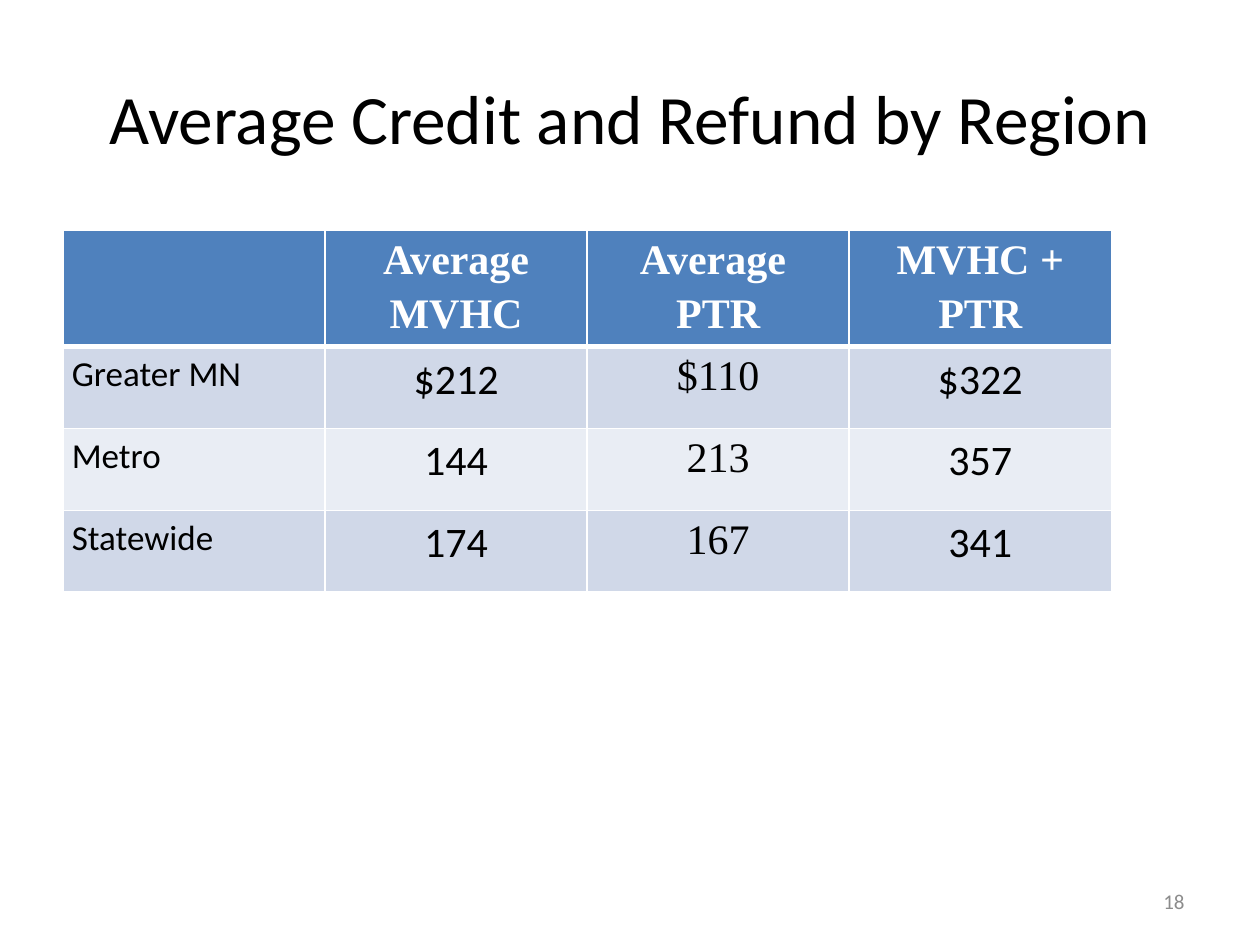
from dataclasses import dataclass

from lxml import etree
from pptx import Presentation
from pptx.dml.color import RGBColor
from pptx.enum.text import MSO_ANCHOR, PP_ALIGN
from pptx.oxml.ns import qn
from pptx.util import Inches, Pt

LEFT, CENTER, RIGHT = PP_ALIGN.LEFT, PP_ALIGN.CENTER, PP_ALIGN.RIGHT
MIDDLE = MSO_ANCHOR.MIDDLE
SANS, SERIF = "Calibri", "Times New Roman"
BLACK, WHITE, GRAY = "000000", "FFFFFF", "8C8C8C"
HEADER_FILL, BAND_FILLS = "4F81BD", ("D0D8E8", "E9EDF4")

COLUMN_WIDTH, ROW_HEIGHT = 2.08, 0.65
ROWS = [
    ("", "Average MVHC", "Average \nPTR", "MVHC + PTR"),
    ("Greater MN", "$212", "$110", "$322"),
    ("Metro", "144", "213", "357"),
    ("Statewide", "174", "167", "341"),
]


@dataclass(frozen=True)
class TextStyle:
    size: float
    font: str = SANS
    color: str = BLACK
    bold: bool = False
    alignment: PP_ALIGN = CENTER
    line_spacing: float = 1.0


@dataclass(frozen=True)
class Label:
    text: str
    left: float
    top: float
    width: float
    height: float
    style: TextStyle


HEADER = TextStyle(24, SERIF, WHITE, bold=True, line_spacing=1.15)
REGION = TextStyle(20, alignment=LEFT, line_spacing=1.15)
VALUE = TextStyle(24, line_spacing=1.15)
REFUND_VALUE = TextStyle(24, SERIF, line_spacing=1.15)
BODY_STYLES = (REGION, VALUE, REFUND_VALUE, VALUE)

LABELS = [
    Label("Average Credit and Refund by Region", 0.5, 0.3, 9, 1.25, TextStyle(39.6)),
    Label("18", 7.17, 6.95, 2.33, 0.4, TextStyle(12, color=GRAY, alignment=RIGHT)),
]


def rgb(value: str) -> RGBColor:
    return RGBColor.from_string(value)


def write_text(frame, text: str, style: TextStyle) -> None:
    frame.text = text
    font_format = {"size": Pt(style.size), "name": style.font, "bold": style.bold}
    for paragraph in frame.paragraphs:
        paragraph.alignment = style.alignment
        paragraph.line_spacing = style.line_spacing
        for run in paragraph.runs:
            for name, value in font_format.items():
                setattr(run.font, name, value)
            run.font.color.rgb = rgb(style.color)


def add_label(slide, label: Label) -> None:
    box = slide.shapes.add_textbox(
        Inches(label.left), Inches(label.top), Inches(label.width), Inches(label.height)
    )
    box.text_frame.word_wrap = True
    box.text_frame.vertical_anchor = MIDDLE
    write_text(box.text_frame, label.text, label.style)


def set_borders(cell, bottom: float, top: float) -> None:
    """Put white lines before the fill, in the order the schema asks for."""
    properties = cell._tc.get_or_add_tcPr()
    widths = {"a:lnL": 1, "a:lnR": 1, "a:lnT": top, "a:lnB": bottom}
    for index, (tag, width) in enumerate(widths.items()):
        line = etree.Element(qn(tag), w=str(Pt(width)))
        fill = etree.SubElement(line, qn("a:solidFill"))
        etree.SubElement(fill, qn("a:srgbClr"), val=WHITE)
        properties.insert(index, line)


def format_cell(cell, text: str, row: int, column: int) -> None:
    is_header = row == 0
    cell.fill.solid()
    cell.fill.fore_color.rgb = rgb(HEADER_FILL if is_header else BAND_FILLS[(row - 1) % 2])
    set_borders(cell, bottom=3 if is_header else 1, top=3 if row == 1 else 1)
    margins = {
        "margin_left": Inches(0.07),
        "margin_right": Inches(0.07),
        "margin_top": 0,
        "margin_bottom": 0,
    }
    for name, value in margins.items():
        setattr(cell, name, value)
    if text:
        write_text(cell.text_frame, text, HEADER if is_header else BODY_STYLES[column])


def add_region_table(slide) -> None:
    row_count, column_count = len(ROWS), len(ROWS[0])
    table = slide.shapes.add_table(
        row_count,
        column_count,
        Inches(0.5),
        Inches(1.83),
        Inches(COLUMN_WIDTH * column_count),
        Inches(ROW_HEIGHT * row_count),
    ).table
    for column in table.columns:
        column.width = Inches(COLUMN_WIDTH)
    for row in table.rows:
        row.height = Inches(ROW_HEIGHT)
    for row_index, texts in enumerate(ROWS):
        for column_index, text in enumerate(texts):
            format_cell(table.cell(row_index, column_index), text, row_index, column_index)


def main() -> None:
    presentation = Presentation()
    presentation.slide_width = Inches(10)
    presentation.slide_height = Inches(7.5)
    slide = presentation.slides.add_slide(presentation.slide_layouts[6])

    # Title and slide number
    for label in LABELS:
        add_label(slide, label)

    # Credits and refunds by region
    add_region_table(slide)

    presentation.save("out.pptx")


if __name__ == "__main__":
    main()
